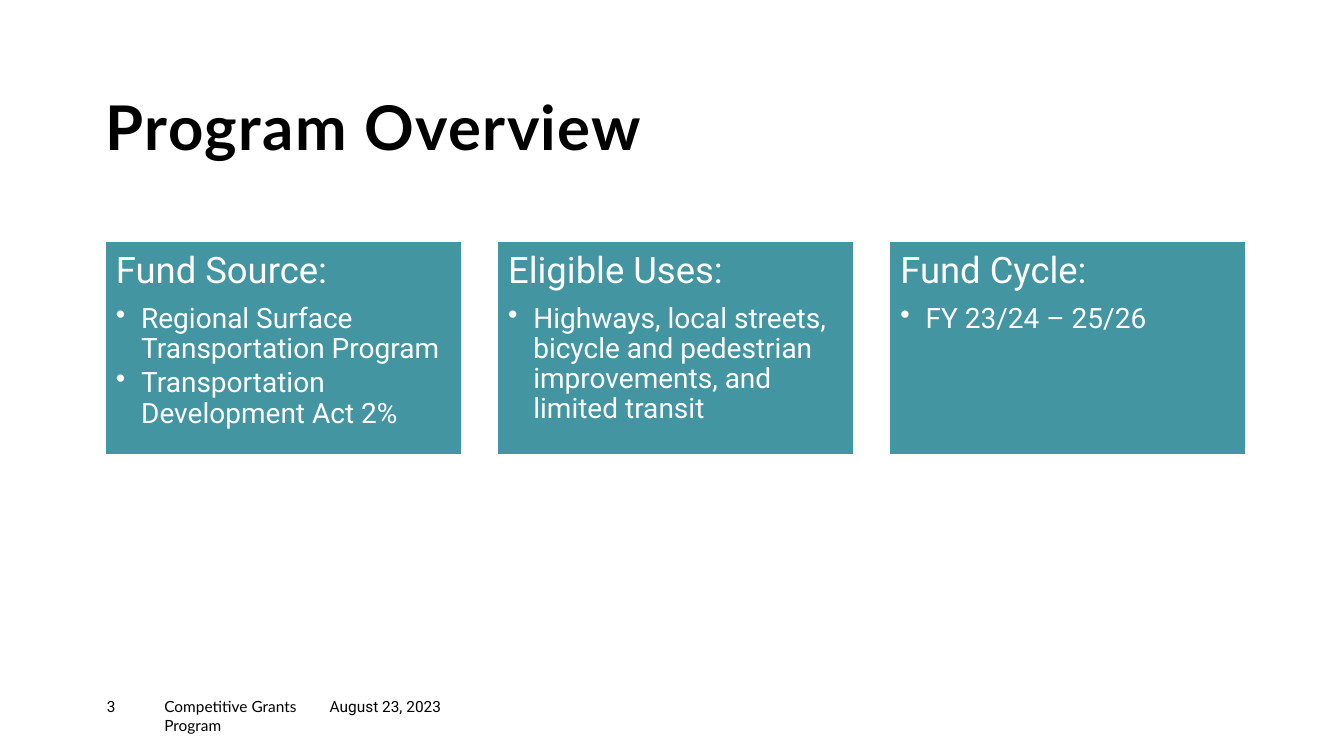
from lxml import etree
from pptx import Presentation
from pptx import util as u
from pptx.dml import color
from pptx.enum import shapes, text
from pptx.oxml import ns

CARDS = [
    ("Fund Source:", ["Regional Surface Transportation Program",
                      "Transportation Development Act 2%"]),
    ("Eligible Uses:", ["Highways, local streets, bicycle and pedestrian "
                        "improvements, and limited transit"]),
    ("Fund Cycle:", ["FY 23/24 – 25/26"]),
]
FOOTERS = [
    ("3", 1.06, 0.57, "Roboto", 6),
    ("Competitive Grants Program", 1.63, 1.64, "Lato", 0),
    ("August 23, 2023", 3.27, 1.44, "Roboto", 0),
]
CARD_LEFT, CARD_WIDTH, CARD_GAP = 1.04, 3.54, 0.35


def rgb(value):
    return color.RGBColor.from_string(value)


def apply(target, values):
    for name, value in values.items():
        setattr(target, name, value)


class ProgramPage:
    black, white, teal = "000000", "FFFFFF", "4495A2"

    def __init__(self, deck):
        self.page = deck.slides.add_slide(deck.slide_layouts[5])

    def frame(self, box, inset, anchor):
        margin = u.Inches(inset)
        apply(box.text_frame, dict(
            word_wrap=True, auto_size=text.MSO_AUTO_SIZE.NONE,
            vertical_anchor=anchor, margin_left=margin, margin_right=margin,
            margin_top=margin, margin_bottom=margin))
        return box.text_frame

    def add_span(self, para, words, hue, after=0, spacing=1.0, **font):
        apply(para, dict(alignment=text.PP_ALIGN.LEFT, line_spacing=spacing,
                         space_before=u.Pt(0), space_after=u.Pt(after)))
        span = para.add_run()
        span.text = words
        apply(span.font, font)
        span.font.color.rgb = rgb(hue)
        return span

    def bullet(self, para):
        para.level = 1
        indent = u.Inches(0.25)
        props = para._p.get_or_add_pPr()
        props.set("marL", str(indent))
        props.set("indent", str(-indent))
        etree.SubElement(props, ns.qn("a:buChar")).set("char", "•")

    def title(self, words):
        box = self.page.shapes.title
        apply(box, dict(left=u.Inches(1.05), top=u.Inches(0.96),
                        width=u.Inches(5.4), height=u.Inches(0.67)))
        frame = self.frame(box, 0, text.MSO_ANCHOR.BOTTOM)
        span = self.add_span(frame.paragraphs[0], words, self.black,
                             spacing=0.9, name="Lato", size=u.Pt(44),
                             bold=True)
        span.font._element.set("spc", "100")

    def card(self, left, heading, points):
        box = self.page.shapes.add_shape(
            shapes.MSO_SHAPE.RECTANGLE, u.Inches(left), u.Inches(2.39),
            u.Inches(CARD_WIDTH), u.Inches(2.12))
        box.shadow.inherit = False
        box.fill.solid()
        box.fill.fore_color.rgb = rgb(self.teal)
        box.line.color.rgb = rgb(self.white)
        box.line.width = u.Pt(1)
        frame = self.frame(box, 0.11, text.MSO_ANCHOR.TOP)
        self.add_span(frame.paragraphs[0], heading, self.white, after=9,
                      spacing=0.9, name="Roboto", size=u.Pt(26))
        for point in points:
            para = frame.add_paragraph()
            self.bullet(para)
            self.add_span(para, point, self.white, after=3, spacing=0.9,
                          name="Roboto", size=u.Pt(20))

    def footer(self, words, left, width, font, after):
        box = self.page.shapes.add_textbox(
            u.Inches(left), u.Inches(6.92), u.Inches(width), u.Inches(0.27))
        frame = self.frame(box, 0, text.MSO_ANCHOR.TOP)
        self.add_span(frame.paragraphs[0], words, self.black, after=after,
                      name=font, size=u.Pt(11))


def main():
    deck = Presentation()
    deck.slide_width, deck.slide_height = u.Inches(13.33), u.Inches(7.5)
    overview = ProgramPage(deck)

    # Title
    overview.title("Program Overview")

    # Three equally spaced cards
    for index, (heading, points) in enumerate(CARDS):
        left = CARD_LEFT + index * (CARD_WIDTH + CARD_GAP)
        overview.card(left, heading, points)

    # Footer line
    for entry in FOOTERS:
        overview.footer(*entry)

    deck.save("out.pptx")


if __name__ == "__main__":
    main()
